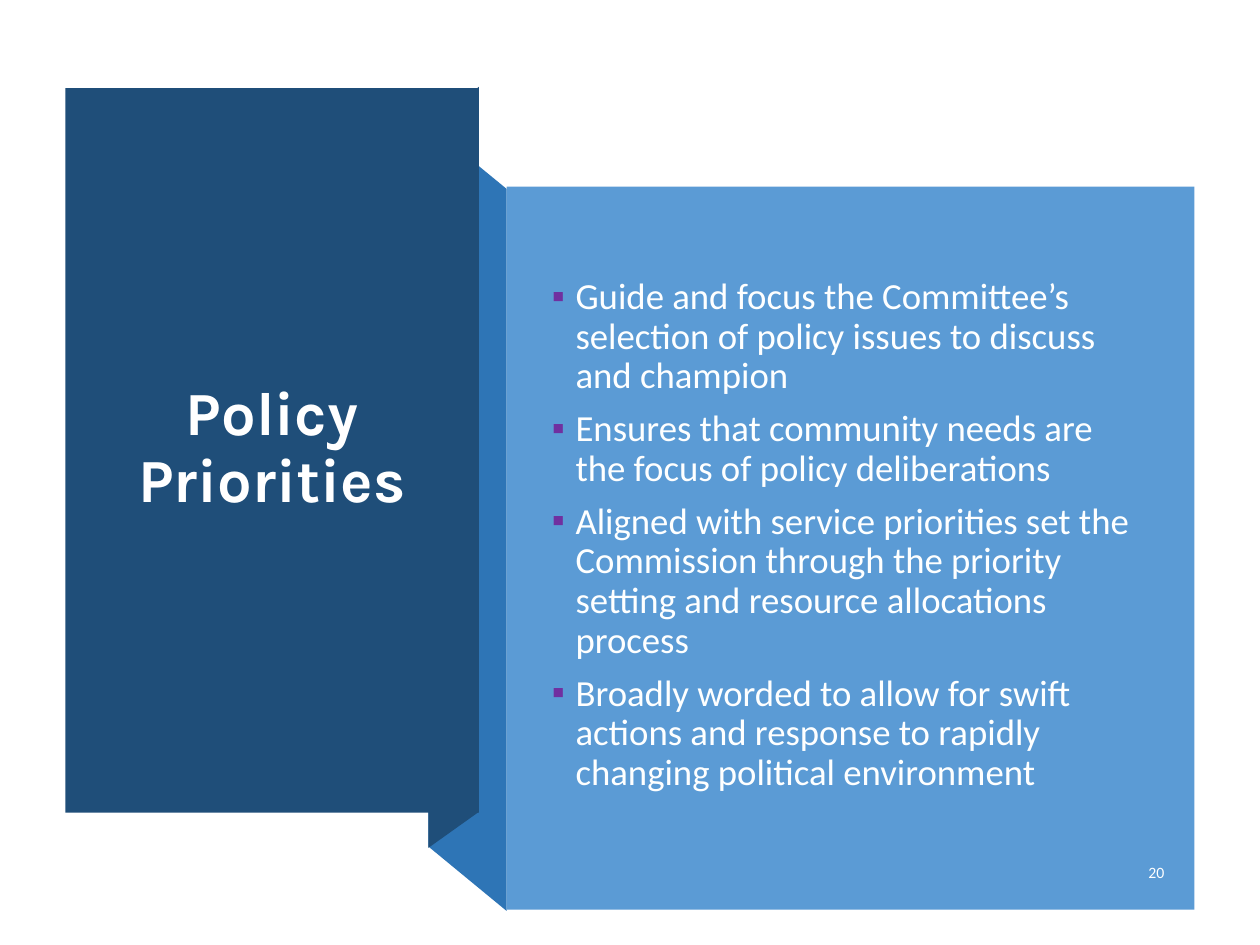
from lxml.etree import SubElement
from pptx import Presentation
from pptx.dml.color import RGBColor
from pptx.enum.shapes import MSO_SHAPE
from pptx.enum.text import MSO_ANCHOR, MSO_AUTO_SIZE, PP_ALIGN
from pptx.oxml.ns import qn
from pptx.util import Pt

COLORS = {
    "navy": "1F4E79",
    "fold": "2E75B6",
    "panel": "5B9BD5",
    "white": "FFFFFF",
    "body": "FEFFFF",
    "bullet": "7030A0",
}


def paint(shape, color):
    shape.fill.solid()
    shape.fill.fore_color.rgb = RGBColor.from_string(COLORS[color])
    shape.line.fill.background()
    shape.shadow.inherit = False


def write(box, lines, *, at, font, size, color, bold=False,
          align=PP_ALIGN.LEFT, spacing=0.9, before=0, after=0, bullet=None):
    box.left, box.top, box.width, box.height = map(Pt, at)
    frame = box.text_frame
    frame.text = "\n".join(lines)
    frame.word_wrap = True
    frame.auto_size = MSO_AUTO_SIZE.NONE
    frame.vertical_anchor = MSO_ANCHOR.MIDDLE
    for para in frame.paragraphs:
        para.alignment = align
        para.line_spacing = spacing
        para.space_before, para.space_after = Pt(before), Pt(after)
        style = para.runs[0].font
        style.name, style.size, style.bold = font, Pt(size), bold
        style.color.rgb = RGBColor.from_string(COLORS[color])
        if bullet:
            props = para._p.get_or_add_pPr()
            props.set("marL", str(Pt(13.5)))
            props.set("indent", str(-Pt(13.5)))
            tint = SubElement(props, qn("a:buClr"))
            SubElement(tint, qn("a:srgbClr"), val=COLORS["bullet"])
            SubElement(props, qn("a:buChar"), char=bullet)


prs = Presentation()
prs.slide_width, prs.slide_height = Pt(720), Pt(540)
slide = prs.slides.add_slide(prs.slide_layouts[1])
shapes = slide.shapes
title, priorities = shapes.title, slide.placeholders[1]

# Folded ribbon joining the two panels
ribbon = [
    ("fold", [(289.5, 520.6), (244.8, 483.8), (244.8, 71.3), (289.5, 108)]),
    ("navy", [(273.6, 464), (244.8, 484.5), (244.8, 70.6), (273.6, 49.7)]),
]
for color, corners in ribbon:
    start, *rest = [(Pt(x), Pt(y)) for x, y in corners]
    outline = shapes.build_freeform(*start)
    outline.add_line_segments(rest, close=True)
    paint(outline.convert_to_shape(), color)

# Title panel and content panel
panels = [("navy", (37.4, 50.4, 236.2, 414)), ("panel", (289.5, 106.6, 393, 413.3))]
for color, area in panels:
    paint(shapes.add_shape(MSO_SHAPE.RECTANGLE, *map(Pt, area)), color)

# Placeholders go in front of the panels
for placeholder in (title, priorities):
    shapes._spTree.append(placeholder._element)

write(title, ["Policy Priorities"], at=(55.4, 77, 200.2, 359.3),
      font="Karla", size=35, color="white", bold=True, align=PP_ALIGN.CENTER)

write(priorities, [
    "Guide and focus the Committee’s selection of policy issues to discuss and champion",
    "Ensures that community needs are the focus of policy deliberations",
    "Aligned with service priorities set the Commission through the priority setting "
    "and resource allocations process",
    "Broadly worded to allow for swift actions and response to rapidly changing "
    "political environment",
], at=(308.2, 135.4, 351.4, 341.3), font="Calibri", size=21, color="body",
    before=7.5, bullet="▪")

# Page number
page_number = shapes.add_textbox(0, 0, 0, 0)
write(page_number, ["20"], at=(632.2, 486, 40.3, 25.2), font="Calibri", size=9,
      color="white", align=PP_ALIGN.RIGHT, spacing=1.0, after=6)

prs.save("out.pptx")
